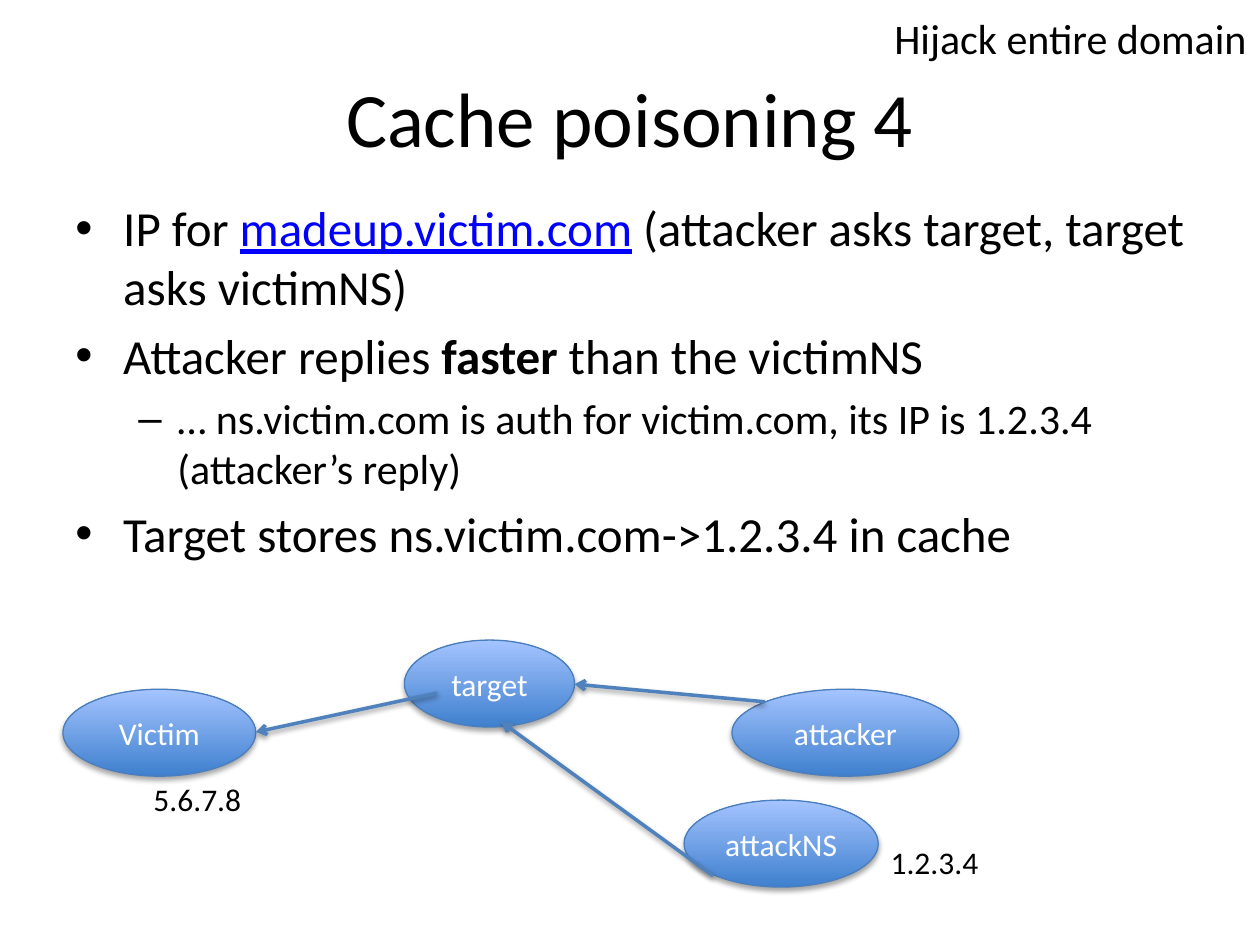
"""Build the cache poisoning slide with its attack diagram."""
from pptx import Presentation
from pptx.dml.color import RGBColor
from pptx.enum.shapes import MSO_CONNECTOR, MSO_SHAPE
from pptx.enum.text import MSO_ANCHOR, PP_ALIGN
from pptx.oxml import parse_xml
from pptx.oxml.ns import nsdecls
from pptx.util import Inches, Pt

OVAL = MSO_SHAPE.OVAL
LINE = MSO_CONNECTOR.STRAIGHT
TOP, MIDDLE = MSO_ANCHOR.TOP, MSO_ANCHOR.MIDDLE
LEFT, CENTER = PP_ALIGN.LEFT, PP_ALIGN.CENTER
rgb = RGBColor.from_string


def style(font, size, color):
    font.name, font.size = "Calibri", Pt(size)
    font.color.rgb = rgb(color)


def shade(shape, alpha, dist):
    props = shape._element.spPr
    for old in props.xpath("a:effectLst"):
        props.remove(old)
    props.append(parse_xml(
        f'<a:effectLst {nsdecls("a")}><a:outerShdw blurRad="{Pt(3.1)}" '
        f'dist="{Pt(dist)}" dir="5400000" rotWithShape="0">'
        f'<a:srgbClr val="000000"><a:alpha val="{alpha * 1000}"/></a:srgbClr>'
        '</a:outerShdw></a:effectLst>'))


deck = Presentation()
deck.slide_width, deck.slide_height = Inches(10), Inches(7.5)
slide = deck.slides.add_slide(deck.slide_layouts[6])
shapes = slide.shapes

texts = [
    ("Cache poisoning 4", 0.5, 0.3, 9, 1.25, 44, True, MIDDLE, CENTER),
    ("Hijack entire domain", 7, 0.05, 3.03, 0.5, 24, False, TOP, LEFT),
    ("1.2.3.4", 6.97, 6.64, 0.9, 0.4, 18, False, TOP, LEFT),
    ("5.6.7.8", 1.12, 6.14, 0.9, 0.4, 18, False, TOP, LEFT),
]
for text, x, y, w, h, size, wrap, anchor, align in texts:
    frame = shapes.add_textbox(Inches(x), Inches(y), Inches(w), Inches(h)).text_frame
    frame.text = text
    frame.word_wrap = wrap
    frame.vertical_anchor = anchor
    frame.paragraphs[0].alignment = align
    style(frame.paragraphs[0].runs[0].font, size, "000000")

levels = [("•", 28, 0.38, 0.38), ("–", 24, 0.81, 0.31)]
points = [
    (0, ["IP for ", "madeup.victim.com", " (attacker asks target, target asks victimNS)"]),
    (0, ["Attacker replies ", "faster", " than the victimNS"]),
    (1, ["… ns.victim.com is auth for victim.com, its IP is 1.2.3.4 (attacker’s reply)"]),
    (0, ["Target stores ns.victim.com->1.2.3.4 in cache"]),
]
body = shapes.add_textbox(Inches(0.5), Inches(1.52), Inches(9), Inches(4.95)).text_frame
body.word_wrap = True
for i, (level, parts) in enumerate(points):
    para = body.add_paragraph() if i else body.paragraphs[0]
    mark, size, margin, hang = levels[level]
    para.level = level
    props = para._p.get_or_add_pPr()
    props.set("marL", str(Inches(margin)))
    props.set("indent", str(-Inches(hang)))
    props.append(parse_xml(f'<a:buFont {nsdecls("a")} typeface="Arial"/>'))
    props.append(parse_xml(f'<a:buChar {nsdecls("a")} char="{mark}"/>'))
    if i:
        para.space_before = Pt(size * 0.2)
    for part in parts:
        run = para.add_run()
        run.text = part
        style(run.font, size, "000000")
        if part == "madeup.victim.com":
            run.font.color.rgb = rgb("0000FF")
            run.font.underline = True
        elif part == "faster":
            run.font.bold = True

nodes = [
    ("Victim", 0.5, 5.47, 1.53),
    ("attacker", 5.81, 5.47, 1.8),
    ("attackNS", 5.43, 6.35, 1.54),
    ("target", 3.21, 5.08, 1.35),
]
for name, x, y, w in nodes:
    node = shapes.add_shape(OVAL, Inches(x), Inches(y), Inches(w), Inches(0.69))
    node.fill.gradient()
    node.fill.gradient_angle = 90
    for stop, color in zip(node.fill.gradient_stops, ["3F80CE", "A4C4FF"]):
        stop.color.rgb = rgb(color)
    node.line.color.rgb = rgb("4B7EBC")
    node.line.width = Pt(0.75)
    shade(node, 35, 1.8)
    frame = node.text_frame
    frame.text = name
    frame.vertical_anchor = MIDDLE
    frame.paragraphs[0].alignment = CENTER
    style(frame.paragraphs[0].runs[0].font, 18, "FFFFFF")

arrows = [
    (6.07, 5.57, 4.56, 5.43),
    (5.66, 6.95, 3.98, 5.73),
    (3.47, 5.5, 2.03, 5.81),
]
for ends in arrows:
    arrow = shapes.add_connector(LINE, *[Inches(end) for end in ends])
    arrow.line.color.rgb = rgb("4F81BD")
    arrow.line.width = Pt(2)
    arrow.line._get_or_add_ln().append(
        parse_xml(f'<a:tailEnd {nsdecls("a")} type="arrow"/>'))
    shade(arrow, 38, 1.6)

deck.save("out.pptx")
